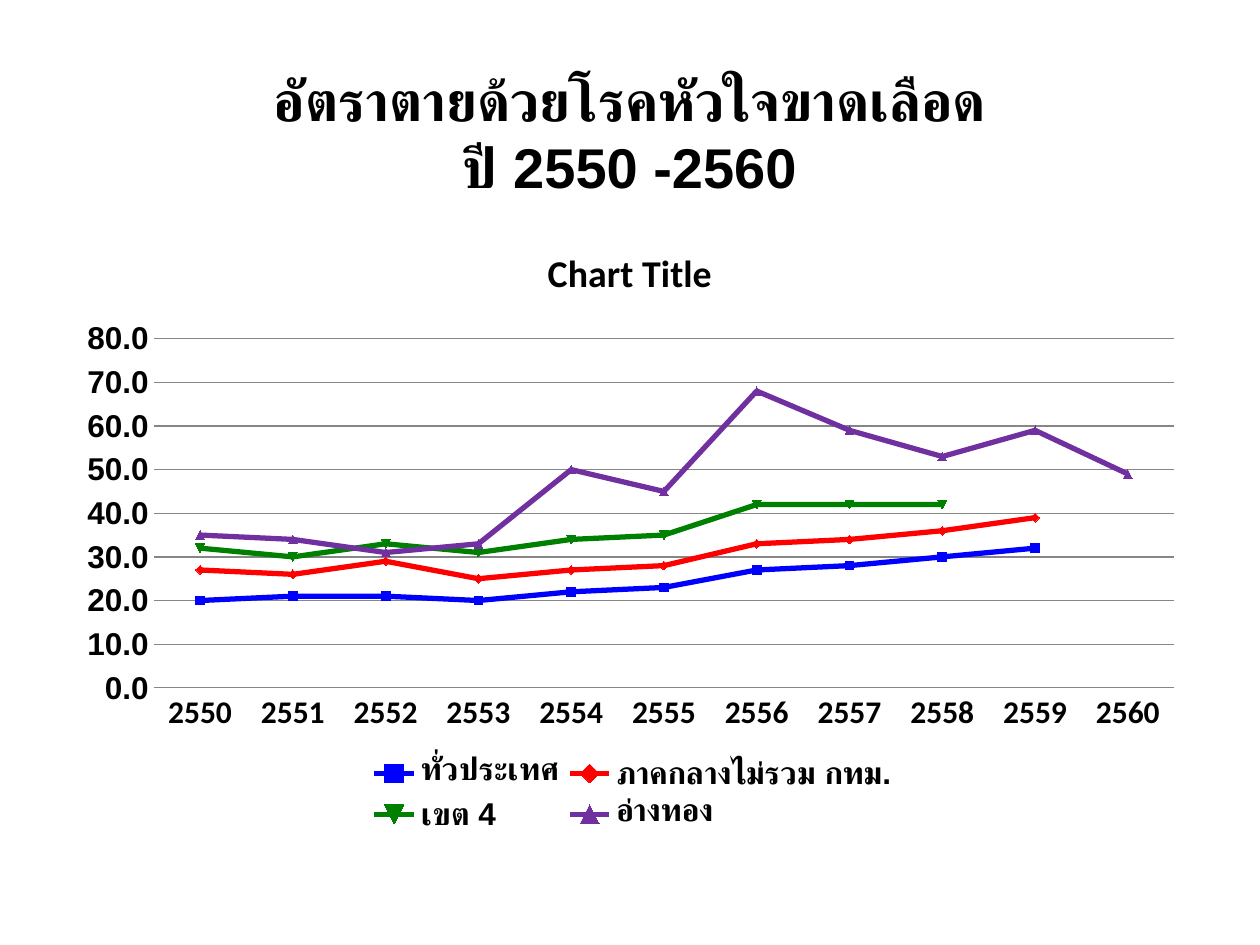
from lxml import etree
from pptx import Presentation
from pptx import util as u
from pptx.chart.data import CategoryChartData
from pptx.dml.color import RGBColor
from pptx.enum import chart as ch, text as tx
from pptx.oxml.ns import qn

BLACK = RGBColor(0, 0, 0)
GRAY = RGBColor(0x86, 0x86, 0x86)
BLUE = RGBColor(0, 0, 0xFF)
RED = RGBColor(0xFF, 0, 0)
GREEN = RGBColor(0, 0x80, 0)
PURPLE = RGBColor(0x70, 0x30, 0xA0)

TITLE = "อัตราตายด้วยโรคหัวใจขาดเลือด\vปี 2550 -2560"
HEAD = "Chart Title"
YEARS = [str(y) for y in range(2550, 2561)]
RATES = [
    ("ทั่วประเทศ", BLUE, (20, 21, 21, 20, 22, 23, 27, 28, 30, 32, None)),
    ("ภาคกลางไม่รวม กทม.", RED, (27, 26, 29, 25, 27, 28, 33, 34, 36, 39, None)),
    ("เขต 4", GREEN, (32, 30, 33, 31, 34, 35, 42, 42, 42, None, None)),
    ("อ่างทอง", PURPLE, (35, 34, 31, 33, 50, 45, 68, 59, 53, 59, 49)),
]
WIDE, HIGH = u.Inches(10), u.Inches(7.5)
TITLE_BOX = (0.05, 0.04, 0.9, 0.2)
CHART_BOX = (0.05, 0.233, 0.9, 0.66)
PLOT_BOX = (0.08, 0.19, 0.9, 0.56)
KEY_BOX = (0.265, 0.85, 0.475, 0.14)


def place(box):
    return [int(share * side) for share, side in zip(box, (WIDE, HIGH) * 2)]


def style(font, size=18, face="Calibri", bold=True):
    font.size, font.name, font.bold = u.Pt(size), face, bold
    font.color.rgb = BLACK


def write(frame, words, **form):
    para = frame.paragraphs[0]
    para.text = words
    para.alignment = tx.PP_ALIGN.CENTER
    for run in para.runs:
        style(run.font, **form)


def pin(node, box, inner=False):
    for old in node.findall(qn("c:layout")):
        node.remove(old)
    lay = etree.Element(qn("c:layout"))
    man = etree.SubElement(lay, qn("c:manualLayout"))
    pairs = [("layoutTarget", "inner")] if inner else []
    pairs += [("xMode", "edge"), ("yMode", "edge")]
    pairs += zip("xywh", map(str, box))
    for tag, val in pairs:
        etree.SubElement(man, qn("c:" + tag)).set("val", val)
    if inner:
        node.insert(0, lay)
    else:
        node.find(qn("c:legendPos")).addnext(lay)


def draw(slide):
    data = CategoryChartData(number_format="0.0")
    data.categories = YEARS
    for name, _, vals in RATES:
        data.add_series(name, vals)
    chart = slide.shapes.add_chart(
        ch.XL_CHART_TYPE.LINE_MARKERS, *place(CHART_BOX), data).chart
    style(chart.font, bold=False)
    write(chart.chart_title.text_frame, HEAD, size=21.6)
    chart.chart_title.include_in_layout = False

    plot = chart.plots[0]
    plot.vary_by_categories = False
    for line, (_, tint, _) in zip(plot.series, RATES):
        line.smooth = False
        line.format.line.color.rgb = tint
        line.format.line.width = u.Pt(3)
        line.marker.size = 5
        line.marker.format.fill.solid()
        line.marker.format.fill.fore_color.rgb = tint
        line.marker.format.line.color.rgb = tint

    for axis, face in ((chart.category_axis, "Calibri"), (chart.value_axis, "Arial")):
        axis.major_tick_mark = axis.minor_tick_mark = ch.XL_TICK_MARK.NONE
        style(axis.tick_labels.font, face=face)
    chart.category_axis.format.line.color.rgb = GRAY
    rates = chart.value_axis
    rates.minimum_scale, rates.maximum_scale, rates.major_unit = 0, 80, 10
    rates.tick_labels.number_format = "0.0"
    rates.tick_labels.number_format_is_linked = False
    rates.format.line.fill.background()
    rates.major_gridlines.format.line.color.rgb = GRAY

    chart.has_legend = True
    key = chart.legend
    key.position = ch.XL_LEGEND_POSITION.BOTTOM
    key.include_in_layout = False
    style(key.font, face="Arial")
    pin(key._element, KEY_BOX)
    pin(plot._element.getparent(), PLOT_BOX, inner=True)


def main():
    deck = Presentation()
    deck.slide_width, deck.slide_height = WIDE, HIGH
    slide = deck.slides.add_slide(deck.slide_layouts[6])
    frame = slide.shapes.add_textbox(*place(TITLE_BOX)).text_frame
    frame.word_wrap = True
    frame.vertical_anchor = tx.MSO_ANCHOR.MIDDLE
    write(frame, TITLE, size=32, face="Arial")
    draw(slide)
    deck.save("out.pptx")


if __name__ == "__main__":
    main()
